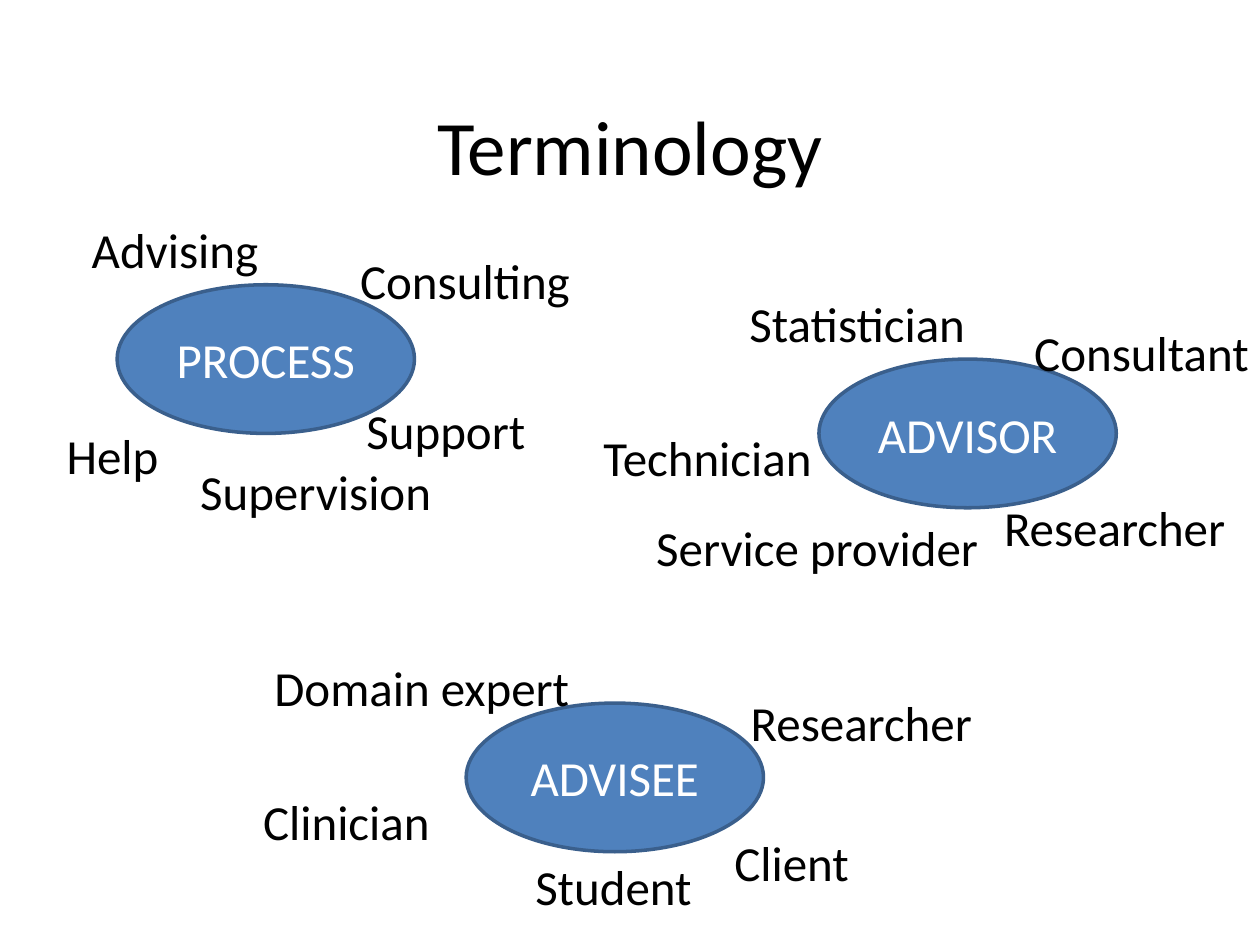
"""Build the Terminology slide: three roles surrounded by their synonyms."""
from dataclasses import dataclass

from pptx import Presentation
from pptx.dml.color import RGBColor
from pptx.enum.shapes import MSO_SHAPE
from pptx.enum.text import MSO_ANCHOR, MSO_AUTO_SIZE, PP_ALIGN
from pptx.slide import Slide
from pptx.text.text import TextFrame
from pptx.util import Inches, Pt

OVAL = MSO_SHAPE.OVAL
MIDDLE = MSO_ANCHOR.MIDDLE
FIT_SHAPE = MSO_AUTO_SIZE.SHAPE_TO_FIT_TEXT
LEFT = PP_ALIGN.LEFT
CENTER = PP_ALIGN.CENTER
BLANK_LAYOUT = 6


@dataclass(frozen=True)
class Theme:
    font: str = "Calibri"
    title_size: float = 44
    body_size: float = 28
    outline_width: float = 2
    text: RGBColor = RGBColor(0x00, 0x00, 0x00)
    light_text: RGBColor = RGBColor(0xFF, 0xFF, 0xFF)
    fill: RGBColor = RGBColor(0x4F, 0x81, 0xBD)
    outline: RGBColor = RGBColor(0x3A, 0x5F, 0x8C)


@dataclass(frozen=True)
class Word:
    text: str
    left: float
    top: float
    width: float


@dataclass(frozen=True)
class Topic:
    name: str
    left: float
    top: float
    words: tuple[Word, ...]


THEME = Theme()
OVAL_WIDTH, OVAL_HEIGHT = 2.36, 1.18
WORD_HEIGHT = 0.57
TOPICS = (
    Topic("PROCESS", 0.93, 2.26, (
        Word("Advising", 0.63, 1.69, 1.54),
        Word("Consulting", 2.76, 1.94, 1.89),
        Word("Support", 2.81, 3.13, 1.48),
        Word("Supervision", 1.49, 3.61, 2.06),
        Word("Help", 0.43, 3.33, 0.94),
    )),
    Topic("ADVISEE", 3.7, 5.58, (
        Word("Client", 5.73, 6.56, 1.12),
        Word("Domain expert", 2.08, 5.17, 2.57),
        Word("Clinician", 1.99, 6.23, 1.54),
        Word("Student", 4.15, 6.75, 1.46),
        Word("Researcher", 5.86, 5.45, 1.98),
    )),
    Topic("ADVISOR", 6.5, 2.85, (
        Word("Statistician", 5.85, 2.28, 1.94),
        Word("Service provider", 5.11, 4.06, 2.78),
        Word("Consultant", 8.11, 2.51, 1.92),
        Word("Researcher", 7.87, 3.9, 1.98),
        Word("Technician", 4.69, 3.34, 1.87),
    )),
)


def write(frame: TextFrame, text: str, size: float, color: RGBColor, alignment: PP_ALIGN) -> None:
    paragraph = frame.paragraphs[0]
    paragraph.alignment = alignment
    run = paragraph.add_run()
    run.text = text
    run.font.name = THEME.font
    run.font.size = Pt(size)
    run.font.color.rgb = color


def add_title(slide: Slide, text: str) -> None:
    frame = slide.shapes.add_textbox(Inches(0.5), Inches(0.52), Inches(9), Inches(1.25)).text_frame
    frame.word_wrap = True
    frame.vertical_anchor = MIDDLE
    write(frame, text, THEME.title_size, THEME.text, CENTER)


def add_topic_oval(slide: Slide, topic: Topic) -> None:
    shape = slide.shapes.add_shape(
        OVAL, Inches(topic.left), Inches(topic.top), Inches(OVAL_WIDTH), Inches(OVAL_HEIGHT)
    )
    shape.shadow.inherit = False
    shape.fill.solid()
    shape.fill.fore_color.rgb = THEME.fill
    shape.line.color.rgb = THEME.outline
    shape.line.width = Pt(THEME.outline_width)
    shape.text_frame.vertical_anchor = MIDDLE
    write(shape.text_frame, topic.name, THEME.body_size, THEME.light_text, CENTER)


def add_word(slide: Slide, word: Word) -> None:
    frame = slide.shapes.add_textbox(
        Inches(word.left), Inches(word.top), Inches(word.width), Inches(WORD_HEIGHT)
    ).text_frame
    frame.word_wrap = False
    frame.auto_size = FIT_SHAPE
    write(frame, word.text, THEME.body_size, THEME.text, LEFT)


def main() -> None:
    presentation = Presentation()
    presentation.slide_width = Inches(10)
    presentation.slide_height = Inches(7.5)
    slide = presentation.slides.add_slide(presentation.slide_layouts[BLANK_LAYOUT])
    add_title(slide, "Terminology")
    for topic in TOPICS:
        add_topic_oval(slide, topic)
    for topic in TOPICS:
        for word in topic.words:
            add_word(slide, word)
    presentation.save("out.pptx")


if __name__ == "__main__":
    main()
